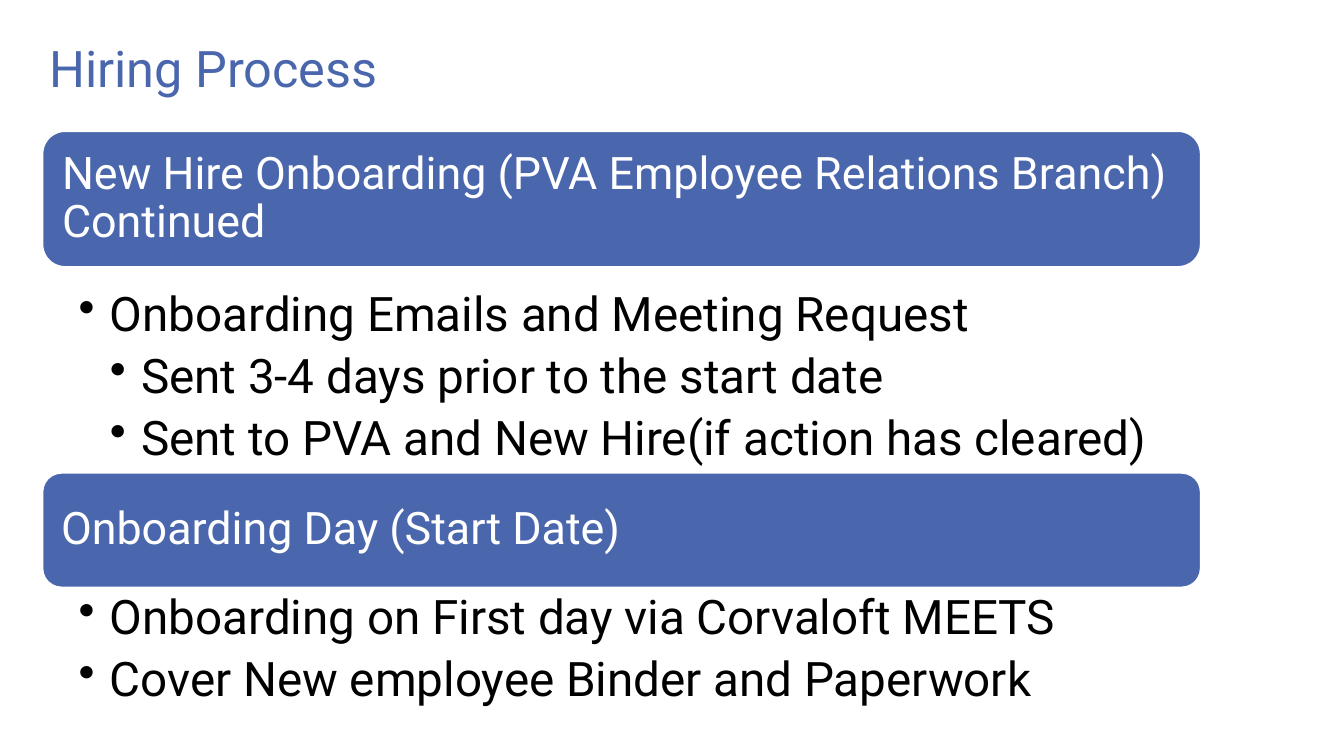
import pptx
import pptx.util
import pptx.dml.color
import pptx.enum.shapes
import pptx.enum.text
import pptx.oxml
import pptx.oxml.ns

COLOURS = {"blue": "4A66AC", "white": "FFFFFF", "black": "000000"}
FONT = "Roboto"
WIDTH, HEIGHT = 13.33, 7.5
BULLET_STEP = 0.31

# Shared column of the banners and lists, in percent of the slide's width
LEFT, SPAN = 3.15, 86.2

# Heading, its top and height, list top and height (percent of the slide's
# height), and the list as (level, wording)
SECTIONS = [
    ("New Hire Onboarding (PVA Employee Relations Branch) Continued",
     (17.33, 18), (37.6, 24.93),
     [(1, "Onboarding Emails and Meeting Request"),
      (2, "Sent 3-4 days prior to the start date"),
      (2, "Sent to PVA and New Hire(if action has cleared)")]),
    ("Onboarding Day (Start Date)",
     (62.53, 15.2), (77.73, 16.27),
     [(1, "Onboarding on First day via Corvaloft MEETS"),
      (1, "Cover New employee Binder and Paperwork")]),
]


def colour(name):
    return pptx.dml.color.RGBColor.from_string(COLOURS[name])


def place(left, top, width, height):
    """Turn percentages of the slide into lengths."""
    return [pptx.util.Inches(side * share / 100) for side, share in
            ((WIDTH, left), (HEIGHT, top), (WIDTH, width), (HEIGHT, height))]


def set_frame(box, margins, middle=False):
    """Set margins (left, top, right, bottom, in inches) and anchor."""
    frame = box.text_frame
    frame.word_wrap = True
    (frame.margin_left, frame.margin_top, frame.margin_right,
     frame.margin_bottom) = map(pptx.util.Inches, margins)
    anchor = pptx.enum.text.MSO_ANCHOR
    frame.vertical_anchor = anchor.MIDDLE if middle else anchor.TOP
    return frame


def write(para, text, size, ink, line=1.0, after=0):
    para.alignment = pptx.enum.text.PP_ALIGN.LEFT
    para.line_spacing = line
    para.space_after = pptx.util.Pt(after)
    span = para.add_run()
    span.text = text
    span.font.name = FONT
    span.font.size = pptx.util.Pt(size)
    span.font.color.rgb = colour(ink)


def add_bullet(para, level):
    para.level = level
    props = para._p.get_or_add_pPr()
    props.set("marL", str(pptx.util.Inches(BULLET_STEP * level)))
    props.set("indent", str(pptx.util.Inches(-BULLET_STEP)))
    bullet = pptx.oxml.parse_xml(
        f'<a:buChar {pptx.oxml.ns.nsdecls("a")} char="•"/>')
    props.append(bullet)


def add_title(page, text):
    box = page.shapes.add_textbox(*place(2.93, 2.67, 35.48, 13.6))
    frame = set_frame(box, (0.1, 0.05, 0.1, 0.05), middle=True)
    write(frame.paragraphs[0], text, 36, "blue", line=0.9)


def add_banner(page, text, top, height):
    box = page.shapes.add_shape(
        pptx.enum.shapes.MSO_SHAPE.ROUNDED_RECTANGLE,
        *place(LEFT, top, SPAN, height))
    box.shadow.inherit = False
    box.fill.solid()
    box.fill.fore_color.rgb = colour("blue")
    box.line.color.rgb = colour("white")
    box.line.width = pptx.util.Pt(1.5)
    frame = set_frame(box, [0.13] * 4, middle=True)
    write(frame.paragraphs[0], text, 32, "white", line=0.9)


def add_list(page, items, top, height):
    box = page.shapes.add_textbox(*place(LEFT, top, SPAN, height))
    frame = set_frame(box, (0.36, 0.06, 0.34, 0.06))
    for index, (level, text) in enumerate(items):
        para = frame.add_paragraph() if index else frame.paragraphs[0]
        write(para, text, 34, "black", line=0.9, after=7.7)
        add_bullet(para, level)


def main():
    deck = pptx.Presentation()
    deck.slide_width = pptx.util.Inches(WIDTH)
    deck.slide_height = pptx.util.Inches(HEIGHT)
    page = deck.slides.add_slide(deck.slide_layouts[6])

    add_title(page, "Hiring Process")
    for heading, banner_rows, list_rows, items in SECTIONS:
        add_banner(page, heading, *banner_rows)
        add_list(page, items, *list_rows)

    deck.save("out.pptx")


if __name__ == "__main__":
    main()
